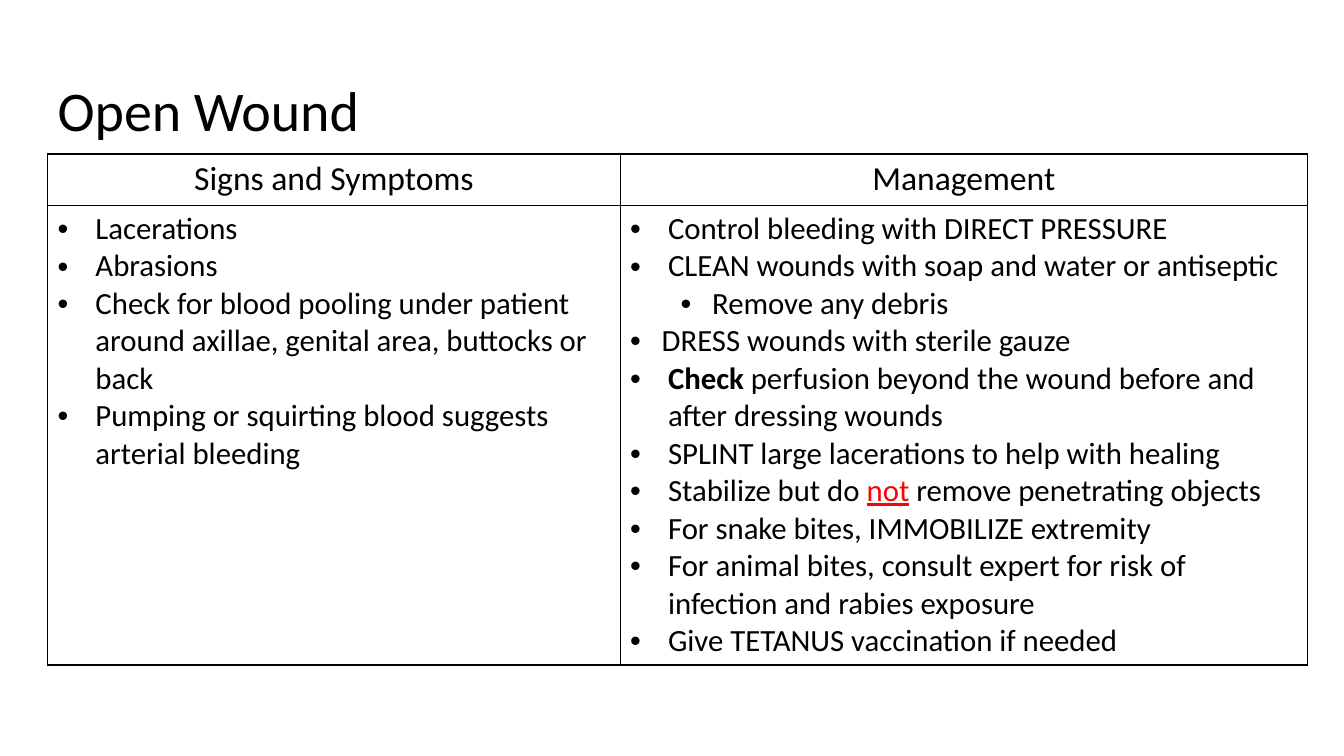
import dataclasses

import lxml.etree
import pptx
import pptx.dml.color
import pptx.enum.text
import pptx.oxml.ns
import pptx.util

Pt = pptx.util.Pt
Align = pptx.enum.text.PP_ALIGN
qn = pptx.oxml.ns.qn


@dataclasses.dataclass(frozen=True)
class Theme:
    font: str = "Calibri"
    ink: str = "000000"
    paper: str = "FFFFFF"
    warning: str = "FF0000"
    title: int = 40
    heading: int = 24
    body: int = 22


theme = Theme()


def add_span(para, text, size, color=theme.ink, bold=False, underline=False):
    span = para.add_run()
    span.text = text
    span.font.name = theme.font
    span.font.size = Pt(size)
    span.font.bold = bold
    span.font.underline = underline
    span.font.color.rgb = pptx.dml.color.RGBColor.from_string(color)


def format_cell(cell):
    properties = cell._tc.get_or_add_tcPr()
    for edge in ("a:lnL", "a:lnR", "a:lnT", "a:lnB"):
        line = lxml.etree.SubElement(properties, qn(edge), w=str(Pt(1)))
        fill = lxml.etree.SubElement(line, qn("a:solidFill"))
        lxml.etree.SubElement(fill, qn("a:srgbClr"), val=theme.ink)
    cell.fill.solid()
    cell.fill.fore_color.rgb = pptx.dml.color.RGBColor.from_string(theme.paper)


deck = pptx.Presentation()
deck.slide_width, deck.slide_height = Pt(960), Pt(540)
page = deck.slides.add_slide(deck.slide_layouts[5])

title = page.shapes.title
title.left, title.top, title.width, title.height = Pt(34), Pt(29), Pt(893), Pt(104)
title.text_frame.auto_size = pptx.enum.text.MSO_AUTO_SIZE.NONE
title.text_frame.vertical_anchor = pptx.enum.text.MSO_ANCHOR.MIDDLE
title_para = title.text_frame.paragraphs[0]
title_para.alignment = Align.LEFT
title_para.line_spacing = 0.9
add_span(title_para, "Open Wound", theme.title)

table = page.shapes.add_table(2, 2, Pt(34), Pt(110), Pt(900), Pt(365)).table
table.first_row = False
table.horz_banding = False
table.columns[0].width, table.columns[1].width = Pt(409), Pt(491)
table.rows[0].height, table.rows[1].height = Pt(36.5), Pt(328.5)

plain = {}
outer = (0, 27, 27)
inner = (1, 58.5, 22.5)
tight = (0, 22.5, 22.5)
columns = [
    ("Signs and Symptoms", [
        (outer, [("Lacerations", plain)]),
        (outer, [("Abrasions", plain)]),
        (outer, [("Check for blood pooling under patient around axillae, "
                  "genital area, buttocks or back", plain)]),
        (outer, [("Pumping or squirting blood suggests arterial bleeding", plain)]),
    ]),
    ("Management", [
        (outer, [("Control bleeding with DIRECT PRESSURE", plain)]),
        (outer, [("CLEAN wounds with soap and water or antiseptic", plain)]),
        (inner, [("Remove any debris", plain)]),
        (tight, [("DRESS wounds with sterile gauze", plain)]),
        (outer, [("Check", {"bold": True}),
                 (" perfusion beyond the wound before and after dressing wounds", plain)]),
        (outer, [("SPLINT large lacerations to help with healing", plain)]),
        (outer, [("Stabilize but do ", plain),
                 ("not", {"color": theme.warning, "underline": True}),
                 (" remove penetrating objects", plain)]),
        (outer, [("For snake bites, IMMOBILIZE extremity", plain)]),
        (outer, [("For animal bites, consult expert for risk of infection "
                  "and rabies exposure", plain)]),
        (outer, [("Give TETANUS vaccination if needed", plain)]),
    ]),
]

for column, (heading, items) in enumerate(columns):
    heading_cell, list_cell = table.cell(0, column), table.cell(1, column)
    format_cell(heading_cell)
    format_cell(list_cell)
    heading_para = heading_cell.text_frame.paragraphs[0]
    heading_para.alignment = Align.CENTER
    add_span(heading_para, heading, theme.heading)

    box = list_cell.text_frame
    for position, ((level, margin, hang), spans) in enumerate(items):
        para = box.add_paragraph() if position else box.paragraphs[0]
        para.level = level
        properties = para._p.get_or_add_pPr()
        properties.set("marL", str(Pt(margin)))
        properties.set("indent", str(-Pt(hang)))
        lxml.etree.SubElement(properties, qn("a:buFont"), typeface="Arial")
        lxml.etree.SubElement(properties, qn("a:buChar"), char="•")
        for text, style in spans:
            add_span(para, text, theme.body, **style)

deck.save("out.pptx")
